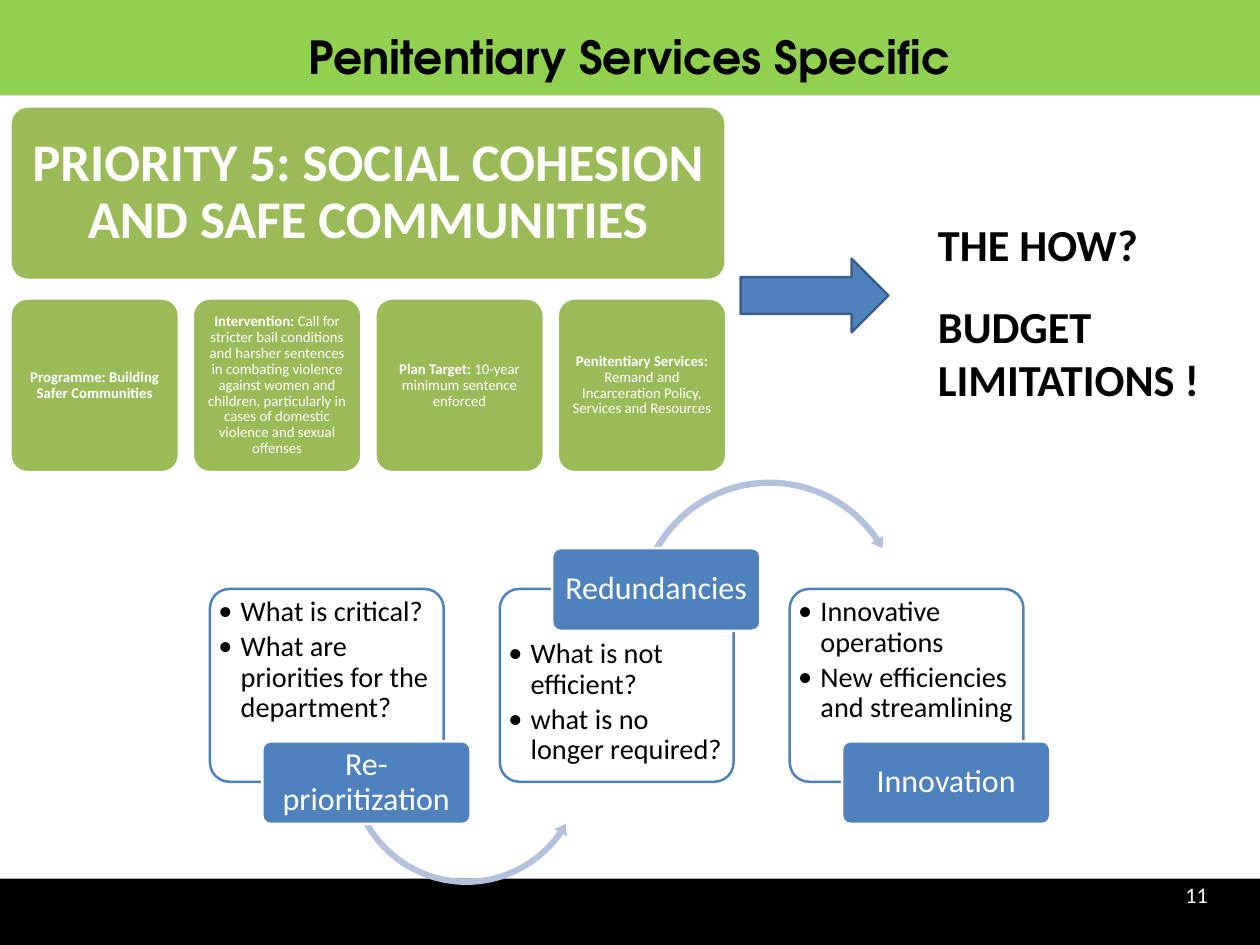
from lxml.etree import SubElement
from pptx import Presentation
from pptx.dml.color import RGBColor
from pptx.enum.shapes import MSO_SHAPE
from pptx.enum.text import MSO_ANCHOR, PP_ALIGN
from pptx.oxml.ns import qn
from pptx.util import Cm, Pt

WHITE, BLACK, BLUE, GREEN = "FFFFFF", "000000", "4F81BD", "9BBB59"


def add_box(kind, x, y, w, h, fill, line=None):
    box = slide.shapes.add_shape(kind, Cm(x), Cm(y), Cm(w), Cm(h))
    box.shadow.inherit = False
    box.fill.solid()
    box.fill.fore_color.rgb = RGBColor.from_string(fill)
    if line:
        box.line.color.rgb = RGBColor.from_string(line)
        box.line.width = Pt(2)
    else:
        box.line.fill.background()
    if kind == MSO_SHAPE.ROUNDED_RECTANGLE:
        box.adjustments[0] = 0.1
    return box


def write(box, paras, size, color, bold=None, align=PP_ALIGN.CENTER, inset=(0, 0),
          anchor=MSO_ANCHOR.MIDDLE, space=0.9, bullet=False, face="Calibri"):
    """Fill a box with paragraphs; each one is a list of (text, bold) runs."""
    frame = box.text_frame
    frame.word_wrap = True
    frame.vertical_anchor = anchor
    frame.margin_left = frame.margin_right = Cm(inset[0])
    frame.margin_top = frame.margin_bottom = Cm(inset[1])
    for i, runs in enumerate(paras):
        para = frame.add_paragraph() if i else frame.paragraphs[0]
        para.alignment = align
        para.line_spacing = space
        if bullet:
            para.space_after = Pt(3.5)
            props = para._p.get_or_add_pPr()
            props.set("marL", str(Cm(0.64)))
            props.set("indent", str(-Cm(0.64)))
            SubElement(props, qn("a:buFont")).set("typeface", face)
            SubElement(props, qn("a:buChar")).set("char", "•")
        para.font.size = Pt(size)
        para.font.name = face
        para.font.bold = bold
        para.font.color.rgb = RGBColor.from_string(color)
        for text, heavy in runs:
            run = para.add_run()
            run.text = text
            if heavy is not None:
                run.font.bold = heavy


deck = Presentation()
deck.slide_width, deck.slide_height = Cm(36.12), Cm(27.1)
slide = deck.slides.add_slide(deck.slide_layouts[5])
title = slide.shapes.title

# Footer and header bands, behind the title
for y, h, fill in [(25.2, 1.9, BLACK), (0, 2.74, "92D050")]:
    band = add_box(MSO_SHAPE.RECTANGLE, 0, y, 36.12, h, fill)
    title._element.addprevious(band._element)

# Title
title.left, title.top, title.width, title.height = Cm(0.3), Cm(0.2), Cm(35.5), Cm(3.84)
write(title, [[("Penitentiary Services Specific", None)]], 37, BLACK, True,
      inset=(0, 0.46), anchor=MSO_ANCHOR.TOP, space=Pt(49.1), face="TeX Gyre Adventor")

# Priority heading
ROUND = MSO_SHAPE.ROUNDED_RECTANGLE
head = add_box(ROUND, 0.3, 3.05, 20.5, 4.98, GREEN, WHITE)
write(head, [[("PRIORITY 5: SOCIAL COHESION AND SAFE COMMUNITIES", None)]],
      43, WHITE, True, inset=(0.4, 0.4))

# Row of four details
details = [
    ("Programme: Building Safer Communities", ""),
    ("Intervention: ", "Call for stricter bail conditions and harsher sentences in combating "
     "violence against women and children, particularly in cases of domestic violence "
     "and sexual offenses"),
    ("Plan Target: ", "10-year minimum sentence enforced"),
    ("Penitentiary Services: ", "Remand and Incarceration Policy, Services and Resources"),
]
for i, (label, text) in enumerate(details):
    box = add_box(ROUND, 0.3 + 5.23 * i, 8.56, 4.83, 4.98, GREEN, WHITE)
    runs = [(label, True)] + ([(text, False)] if text else [])
    write(box, [runs], 12, WHITE, inset=(0.14, 0.14))

# Arrow to the question
add_box(MSO_SHAPE.RIGHT_ARROW, 21.23, 7.42, 4.24, 2.11, BLUE, "3A5F8C")

# Plain texts: question, limits, page number
for text, x, y, w, h, size, color, bold, inset in [
    ("THE HOW?", 26.64, 6.1, 6.96, 1.8, 36, BLACK, True, (0.25, 0.13)),
    ("BUDGET LIMITATIONS !", 26.64, 8.46, 8.15, 3.33, 36, BLACK, True, (0.25, 0.13)),
    ("11", 33.98, 25.27, 1.2, 0.97, 18, WHITE, None, (0, 0)),
]:
    note = slide.shapes.add_textbox(Cm(x), Cm(y), Cm(w), Cm(h))
    write(note, [[(text, None)]], size, color, bold, PP_ALIGN.LEFT, inset,
          MSO_ANCHOR.TOP, 1.0)

# Three steps, each a card, a curved arrow to the next, and a label
steps = [
    ("Re- prioritization", ["What is critical?", "What are priorities for the department?"],
     (MSO_SHAPE.LEFT_CIRCULAR_ARROW, 9.88, 18.52, 6.98,
      (0.025, 3.094, 20.849, 90.245, 0.03))),
    ("Redundancies", ["What is not efficient?", "what is no longer required?"],
     (MSO_SHAPE.CIRCULAR_ARROW, 18.14, 13.64, 7.85,
      (0.023, 2.738, 195.507, 125.755, 0.026))),
    ("Innovation", ["Innovative operations", "New efficiencies and streamlining"], None),
]
for i, (name, points, curve) in enumerate(steps):
    x, raised = 6.02 + 8.31 * i, i == 1
    card = add_box(ROUND, x, 16.89, 6.7, 5.53, WHITE, BLUE)
    write(card, [[(point, None)] for point in points], 23, BLACK, align=PP_ALIGN.LEFT,
          inset=(0.08, 0.08), anchor=MSO_ANCHOR.TOP, bullet=True)
    if raised:
        card.text_frame.margin_top = Cm(1.29)
    if curve:
        kind, left, top, side, bends = curve
        arc = add_box(kind, left, top, side, side, "B3C1DB")
        for k, bend in enumerate(bends):
            arc.adjustments[k] = bend
    tag = add_box(ROUND, x + 1.5, 15.72 if raised else 21.26, 5.97, 2.37, BLUE, WHITE)
    write(tag, [[(name, None)]], 26, WHITE, inset=(0.11, 0.08))

deck.save("out.pptx")
